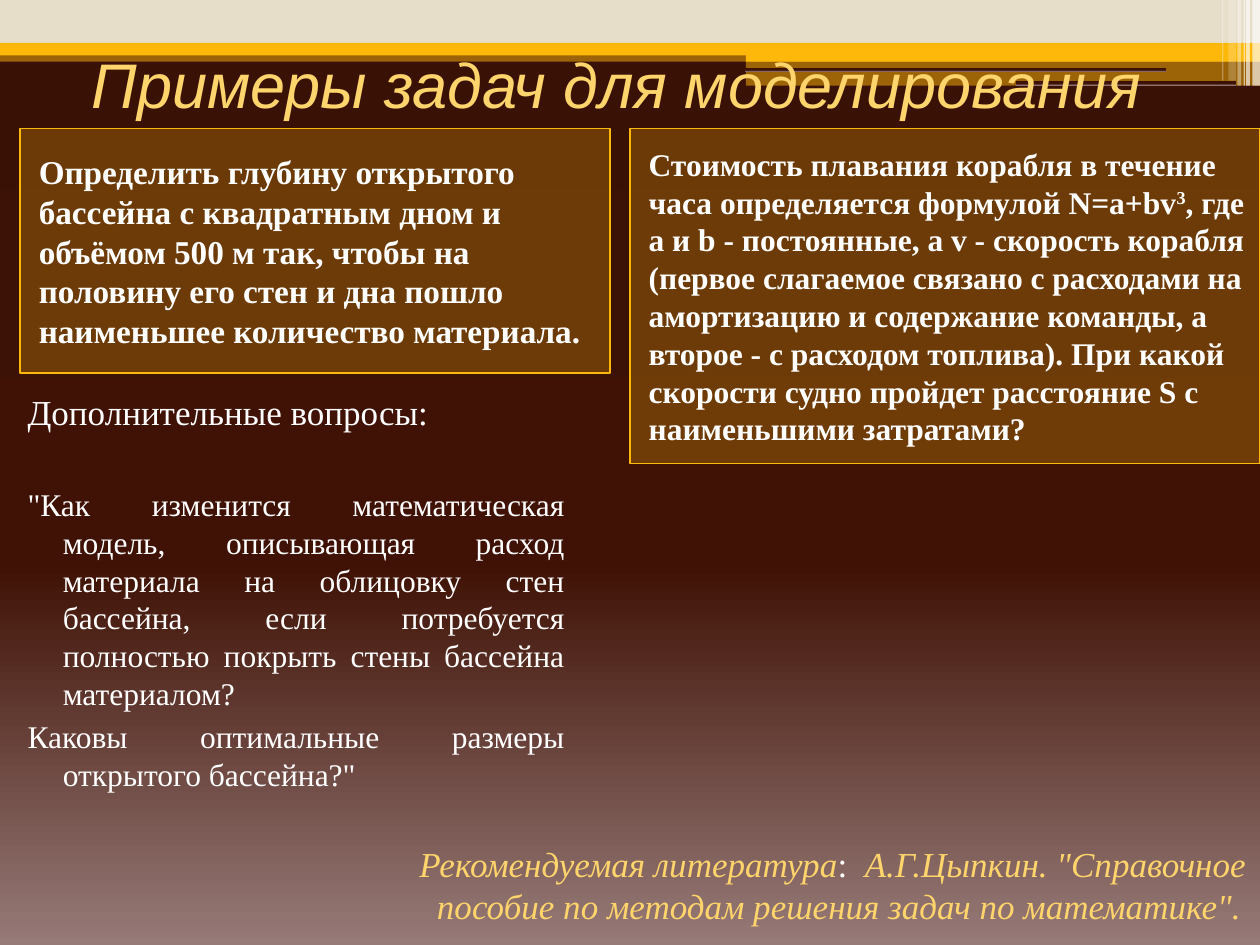
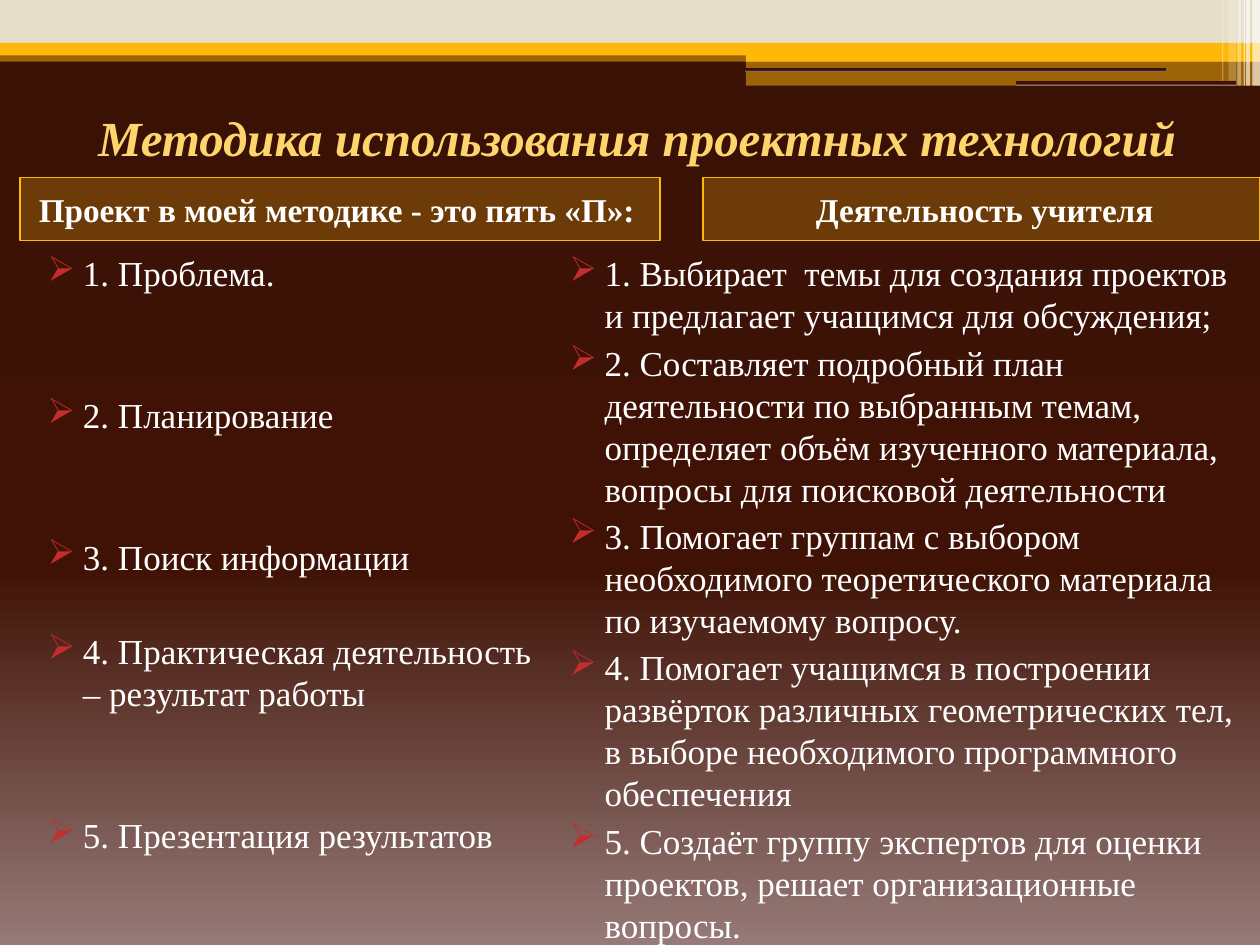
from copy import deepcopy
from dataclasses import dataclass

from lxml import etree
from pptx import Presentation
from pptx.dml.color import RGBColor
from pptx.enum import shapes, text
from pptx.oxml.ns import qn
from pptx.util import Inches, Pt


@dataclass(frozen=True)
class Theme:
    backdrop: tuple = (("3A1105", 0), ("401206", 0.6), ("967A77", 1))
    sand: str = "E7DEC9"
    amber: str = "FEB80A"
    heading: str = "FED46C"
    white: str = "FFFFFF"
    bullet: str = "C32D2E"
    serif: str = "Times New Roman"
    sans: str = "Arial"
    body_size: int = 20
    panel_size: int = 19
    small_size: int = 18
    line_pitch: float = 1.2
    gap: int = 3


theme = Theme()


def paint(fill, colour, alpha=100):
    """Fill with one colour of the given opacity, or with a three-stop gradient."""
    if isinstance(colour, tuple):
        fill.gradient()
        fill.gradient_angle = 270
        last = fill.gradient_stops[1]._gs
        last.addnext(deepcopy(last))
        for stop, (shade, position) in zip(fill.gradient_stops, colour):
            stop.color.rgb = RGBColor.from_string(shade)
            stop.position = position
        return
    fill.solid()
    fill.fore_color.rgb = RGBColor.from_string(colour)
    if alpha < 100:
        solid = fill._xPr.find(qn("a:solidFill"))
        etree.SubElement(solid[0], qn("a:alpha"), val=str(alpha * 1000))


def write(frame, *runs, size=theme.body_size, font=theme.serif, colour=theme.white,
          bold=False, italic=False, align=text.PP_ALIGN.LEFT, left=0.4, first=-0.28,
          before=theme.gap, bullet=None):
    """Add a paragraph; a run is a string or a pair of string and own format."""
    frame.word_wrap = True
    frame.auto_size = text.MSO_AUTO_SIZE.NONE
    paragraph = frame.paragraphs[0]
    if paragraph.runs:
        paragraph = frame.add_paragraph()
    paragraph.alignment = align
    paragraph.line_spacing = Pt(size * theme.line_pitch)
    paragraph.space_before = Pt(before)
    properties = paragraph._p.get_or_add_pPr()
    properties.set("marL", str(Inches(left)))
    properties.set("indent", str(Inches(first)))
    if bullet:
        bullet_colour = etree.SubElement(properties, qn("a:buClr"))
        etree.SubElement(bullet_colour, qn("a:srgbClr"), val=theme.bullet)
        etree.SubElement(properties, qn("a:buChar"), char=bullet)
    for item in runs:
        words, own = (item, {}) if isinstance(item, str) else item
        run = paragraph.add_run()
        run.text = words
        run.font.size = Pt(size)
        run.font.name = font
        run.font.bold = bold
        run.font.italic = own.get("italic", italic)
        run.font.color.rgb = RGBColor.from_string(own.get("colour", colour))
        if "baseline" in own:
            run.font._element.set("baseline", str(own["baseline"]))


prs = Presentation()
prs.slide_width, prs.slide_height = Inches(10), Inches(7.5)
layout = prs.slide_layouts[5]
paint(layout.background.fill, theme.backdrop)
tasks = prs.slides.add_slide(layout)
method = prs.slides.add_slide(layout)

# Header bands and light stripes, shared through the layout
RECT = shapes.MSO_SHAPE.RECTANGLE
ROUND = shapes.MSO_SHAPE.ROUNDED_RECTANGLE
header = [
    (RECT, 0, 0.4, 10, 0.09, theme.amber, 50),
    (RECT, 0, 0, 10, 0.34, theme.sand, 100),
    (RECT, 0, 0.34, 10, 0.1, theme.amber, 100),
    (RECT, 5.92, 0.39, 4.08, 0.1, theme.amber, 100),
    (RECT, 5.92, 0.48, 4.08, 0.2, theme.amber, 50),
    (ROUND, 5.91, 0.54, 3.35, 0.03, theme.backdrop, 100),
    (ROUND, 8.06, 0.64, 1.75, 0.04, theme.backdrop, 100),
]
stripes = [
    (9.94, 0.06, 0.68, 65), (9.89, 0.03, 0.68, 65), (9.87, 0.01, 0.68, 60),
    (9.82, 0.03, 0.68, 40), (9.75, 0.06, 0.64, 20), (9.7, 0.01, 0.64, 30),
]
header += [(RECT, x, 0, w, h, theme.white, alpha) for x, w, h, alpha in stripes]
for number, (kind, x, y, w, h, colour, alpha) in enumerate(header, start=20):
    band = tasks.shapes.add_shape(kind, Inches(x), Inches(y), Inches(w), Inches(h))
    band.shadow.inherit = False
    paint(band.fill, colour, alpha)
    band.line.fill.background()
    band._element.xpath(".//p:cNvPr")[0].set("id", str(number))
    layout.shapes._spTree.append(band._element)

# Slide titles
headings = [
    (tasks, "Примеры задач для моделирования", (0.31, 0.39, 9.17, 0.55),
     dict(size=36, font=theme.sans)),
    (method, "Методика использования проектных технологий", (0.47, 0.7, 9.17, 0.78),
     dict(size=28, bold=True)),
]
for slide, words, place, look in headings:
    title = slide.shapes.title
    title.left, title.top, title.width, title.height = map(Inches, place)
    title.text_frame.vertical_anchor = text.MSO_ANCHOR.MIDDLE
    write(title.text_frame, words, colour=theme.heading, italic=True,
          align=text.PP_ALIGN.CENTER, left=0, first=0, before=0, **look)

# Framed panels
cost_of_sailing = [
    "Стоимость плавания корабля в течение часа определяется формулой N=a+bv",
    ("3", {"baseline": 30000}),
    ", где a и b - постоянные, а v - скорость корабля (первое слагаемое связано "
    "с расходами на амортизацию и содержание команды, а второе - с расходом "
    "топлива). При какой скорости судно пройдет расстояние S с наименьшими "
    "затратами?",
]
pool_depth = [
    "Определить глубину открытого бассейна с квадратным дном и объёмом "
    "500 м\u00a0так, чтобы на половину его стен и дна пошло наименьшее "
    "количество материала.".replace("\u00a0", " "),
]
panels = [
    (tasks, pool_depth, (0.16, 1.02, 4.68, 1.94), {}),
    (tasks, cost_of_sailing, (5, 1.02, 5, 2.66), dict(size=theme.small_size)),
    (method, ["Проект в моей методике - это пять «П»:"], (0.16, 1.41, 5.08, 0.5), {}),
    (method, ["Деятельность учителя"], (5.58, 1.41, 4.42, 0.5),
     dict(align=text.PP_ALIGN.CENTER)),
]
for slide, runs, place, look in panels:
    panel = slide.shapes.add_shape(RECT, *map(Inches, place))
    panel.shadow.inherit = False
    paint(panel.fill, theme.amber, 25)
    panel.line.color.rgb = RGBColor.from_string(theme.amber)
    panel.line.width = Pt(1)
    panel.text_frame.vertical_anchor = text.MSO_ANCHOR.MIDDLE
    write(panel.text_frame, *runs,
          **{"size": theme.panel_size, "bold": True, "left": 0.05, "first": 0, **look})

# Further questions and recommended reading
questions = tasks.shapes.add_textbox(
    Inches(0), Inches(3.05), Inches(4.58), Inches(4.25)).text_frame
write(questions, "Дополнительные вопросы:")
for question, before in [
    ("\"Как изменится математическая модель, описывающая расход материала на "
     "облицовку стен бассейна, если потребуется полностью покрыть стены бассейна "
     "материалом?", 30),
    ("Каковы оптимальные размеры открытого бассейна?\"", theme.gap),
]:
    write(questions, question, size=theme.small_size,
          align=text.PP_ALIGN.JUSTIFY, before=before)

reading = tasks.shapes.add_textbox(
    Inches(2.97), Inches(6.64), Inches(7.03), Inches(0.86)).text_frame
write(reading, "Рекомендуемая литература",
      (":  ", {"colour": theme.white, "italic": False}),
      "А.Г.Цыпкин. \"Справочное пособие по методам решения задач по математике\".",
      colour=theme.heading, italic=True, first=-0.14)

# Project stages beside the teacher's actions
stages = [
    ("1. Проблема.", theme.gap),
    ("2. Планирование", 57),
    ("3. Поиск информации", 57),
    ("4. Практическая деятельность – результат работы", 30),
    ("5. Презентация результатов", 57),
]
actions = [
    "1. Выбирает  темы для создания проектов и предлагает учащимся для обсуждения;",
    "2. Составляет подробный план деятельности по выбранным темам, определяет "
    "объём изученного материала, вопросы для поисковой деятельности",
    "3. Помогает группам с выбором необходимого теоретического материала по "
    "изучаемому вопросу.",
    "4. Помогает учащимся в построении развёрток различных геометрических тел, "
    "в выборе необходимого программного обеспечения",
    "5. Создаёт группу экспертов для оценки проектов, решает организационные "
    "вопросы.",
]
columns = [
    ((0.16, 1.95, 4.22, 5.39), stages),
    ((4.3, 1.95, 5.7, 5.55), [(action, theme.gap) for action in actions]),
]
for place, entries in columns:
    column = method.shapes.add_textbox(*map(Inches, place)).text_frame
    for entry, before in entries:
        write(column, entry, before=before, bullet="➢")

prs.save("out.pptx")
